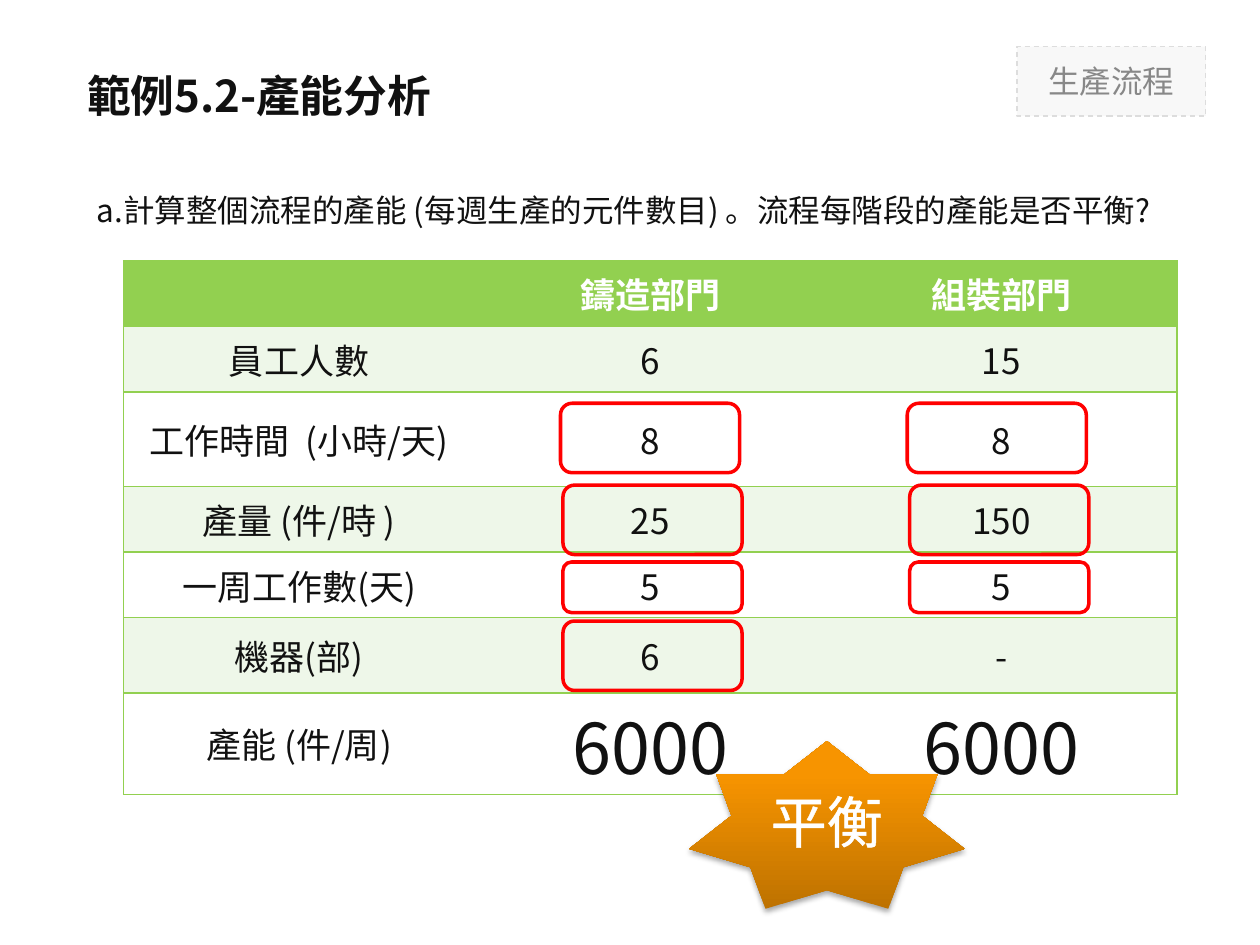
from pptx import Presentation
from pptx.dml.color import RGBColor
from pptx.enum import dml, shapes, text
from pptx.oxml import parse_xml
from pptx.oxml.ns import nsdecls, qn
from pptx.util import Cm, Pt

FONT = "Noto Sans CJK SC"
INK = RGBColor(0x11, 0x11, 0x11)
WHITE = RGBColor(0xFF, 0xFF, 0xFF)
GREEN = RGBColor(0x92, 0xD0, 0x50)
PALE = RGBColor(0xEE, 0xF7, 0xE9)
RED = RGBColor(0xFF, 0x00, 0x00)
GREY = RGBColor(0x88, 0x88, 0x88)
MIST = RGBColor(0xF8, 0xF8, 0xF8)
EDGE = RGBColor(0xDD, 0xDD, 0xDD)
BLACK = RGBColor(0x00, 0x00, 0x00)
STOPS = [(0, RGBColor(0xBE, 0x72, 0x00)), (80, RGBColor(0xF7, 0x94, 0x00)),
         (100, RGBColor(0xF8, 0x95, 0x00))]

ROWS = [
    ("", "鑄造部門", "組裝部門"),
    ("員工人數", "6", "15"),
    ("工作時間  (小時/天)", "8", "8"),
    ("產量 (件/時 )", "25", "150"),
    ("一周工作數(天)", "5", "5"),
    ("機器(部)", "6", "-"),
    ("產能 (件/周)", "6000", "6000"),
]
HEIGHTS = [1.32, 1.32, 1.91, 1.32, 1.32, 1.52, 1.32]
# Red frames: left and top within the table, height, number of columns framed
MARKS = [(8.81, 2.87, 1.4, 2), (8.86, 4.52, 1.4, 2),
         (8.86, 6.07, 1.02, 2), (8.86, 7.26, 1.4, 1)]


def place(shape, box):
    shape.left, shape.top, shape.width, shape.height = map(Cm, box)


def write(frame, words, size, color, bold=False, align=text.PP_ALIGN.CENTER):
    para = frame.paragraphs[0]
    para.alignment = align
    run = para.add_run()
    run.text = words
    font = run.font
    font.name, font.size, font.bold = FONT, Pt(size), bold
    font.color.rgb = color
    latin = run._r.rPr.find(qn("a:latin"))
    latin.addnext(parse_xml(f'<a:ea {nsdecls("a")} typeface="{FONT}"/>'))
    return run


def add_box(slide, kind, box):
    shape = slide.shapes.add_shape(kind, *map(Cm, box))
    shape.shadow.inherit = False
    shape.text_frame.vertical_anchor = text.MSO_ANCHOR.MIDDLE
    return shape


def add_title(slide, box):
    title = slide.shapes.title
    place(title, box)
    frame = title.text_frame
    frame.auto_size = text.MSO_AUTO_SIZE.NONE
    frame.vertical_anchor = text.MSO_ANCHOR.MIDDLE
    write(frame, "範例5.2-產能分析", 25, INK, True, text.PP_ALIGN.LEFT)


def add_question(slide, box):
    body = slide.placeholders[1]
    place(body, box)
    frame = body.text_frame
    frame.auto_size = text.MSO_AUTO_SIZE.NONE
    frame.margin_right = 0
    para = frame.paragraphs[0]
    props = para._p.get_or_add_pPr()
    props.set("marL", "0")
    props.set("indent", "0")
    props.append(parse_xml(f'<a:buNone {nsdecls("a")}/>'))
    para.space_before = Pt(0)
    write(frame, "a.計算整個流程的產能 (每週生產的元件數目) 。流程每階段的產能是否平衡?",
          18, INK, align=text.PP_ALIGN.LEFT)


def add_badge(slide, box):
    badge = add_box(slide, shapes.MSO_SHAPE.RECTANGLE, box)
    badge.fill.solid()
    badge.fill.fore_color.rgb = MIST
    badge.line.color.rgb = EDGE
    badge.line.width = Pt(0.75)
    badge.line.dash_style = dml.MSO_LINE.DASH
    write(badge.text_frame, "生產流程", 18, GREY)


def set_edges(cell, sides):
    props = cell._tc.get_or_add_tcPr()
    for side in "LRTB":
        paint = (f'<a:solidFill><a:srgbClr val="{GREEN}"/></a:solidFill>'
                 if side in sides else "<a:noFill/>")
        props.append(parse_xml(
            f'<a:ln{side} {nsdecls("a")} w="{Pt(1)}">{paint}</a:ln{side}>'))


def add_grid(slide, box):
    count = len(ROWS[0])
    grid = slide.shapes.add_table(len(ROWS), count, *map(Cm, box)).table
    grid.first_row = grid.horz_banding = False
    for col in grid.columns:
        col.width = Cm(box[2] / count)
    for r, words in enumerate(ROWS):
        grid.rows[r].height = Cm(HEIGHTS[r])
        head, last = r == 0, r == len(ROWS) - 1
        for c, word in enumerate(words):
            cell = grid.cell(r, c)
            set_edges(cell, "TB" + ("L" if c == 0 else "R" if c == count - 1 else ""))
            cell.fill.solid()
            cell.fill.fore_color.rgb = GREEN if head else PALE if r % 2 else WHITE
            cell.margin_left = cell.margin_right = 0
            cell.margin_top = cell.margin_bottom = 0
            cell.vertical_anchor = text.MSO_ANCHOR.MIDDLE
            if word:
                write(cell.text_frame, word, 40 if last and c else 20,
                      WHITE if head else INK, head)


def add_marks(slide, box):
    for left, top, height, count in MARKS:
        for c in range(count):
            mark = add_box(slide, shapes.MSO_SHAPE.ROUNDED_RECTANGLE,
                           (box[0] + left + c * 6.99, box[1] + top, 3.61, height))
            mark.fill.background()
            mark.line.color.rgb = RED
            mark.line.width = Pt(2)


def add_star(slide, box):
    star = add_box(slide, shapes.MSO_SHAPE.STAR_7_POINT, box)
    star.line.fill.background()
    # Three-stop gradient running upwards
    stops = "".join(f'<a:gs pos="{pos * 1000}"><a:srgbClr val="{color}"/></a:gs>'
                    for pos, color in STOPS)
    star._element.spPr.find(qn("a:prstGeom")).addnext(parse_xml(
        f'<a:gradFill {nsdecls("a")} rotWithShape="1"><a:gsLst>{stops}</a:gsLst>'
        '<a:lin ang="16200000" scaled="0"/></a:gradFill>'))
    # Soft shadow below
    star._element.spPr.find(qn("a:effectLst")).append(parse_xml(
        f'<a:outerShdw {nsdecls("a")} blurRad="{Pt(3.1)}" dist="{Pt(1.8)}" '
        f'dir="5400000" rotWithShape="0"><a:srgbClr val="{BLACK}">'
        '<a:alpha val="35000"/></a:srgbClr></a:outerShdw>'))
    run = write(star.text_frame, "平衡", 32, WHITE)
    # White outline around the letters
    run._r.rPr.insert(0, parse_xml(
        f'<a:ln {nsdecls("a")} w="{Pt(1.45)}"><a:solidFill>'
        f'<a:srgbClr val="{WHITE}"/></a:solidFill></a:ln>'))


def main():
    deck = Presentation()
    deck.slide_width, deck.slide_height = Cm(25.4), Cm(19.05)
    slide = deck.slides.add_slide(deck.slide_layouts[1])
    table = (2.49, 5.26, 21.24, sum(HEIGHTS))
    add_badge(slide, (20.5, 0.94, 3.81, 1.4))
    add_title(slide, (1.5, 0.91, 18.39, 2.01))
    add_question(slide, (1.7, 3.73, 22.61, 1.4))
    add_grid(slide, table)
    add_marks(slide, table)
    add_star(slide, (13.89, 14.94, 5.56, 3.38))
    deck.save("out.pptx")


if __name__ == "__main__":
    main()
